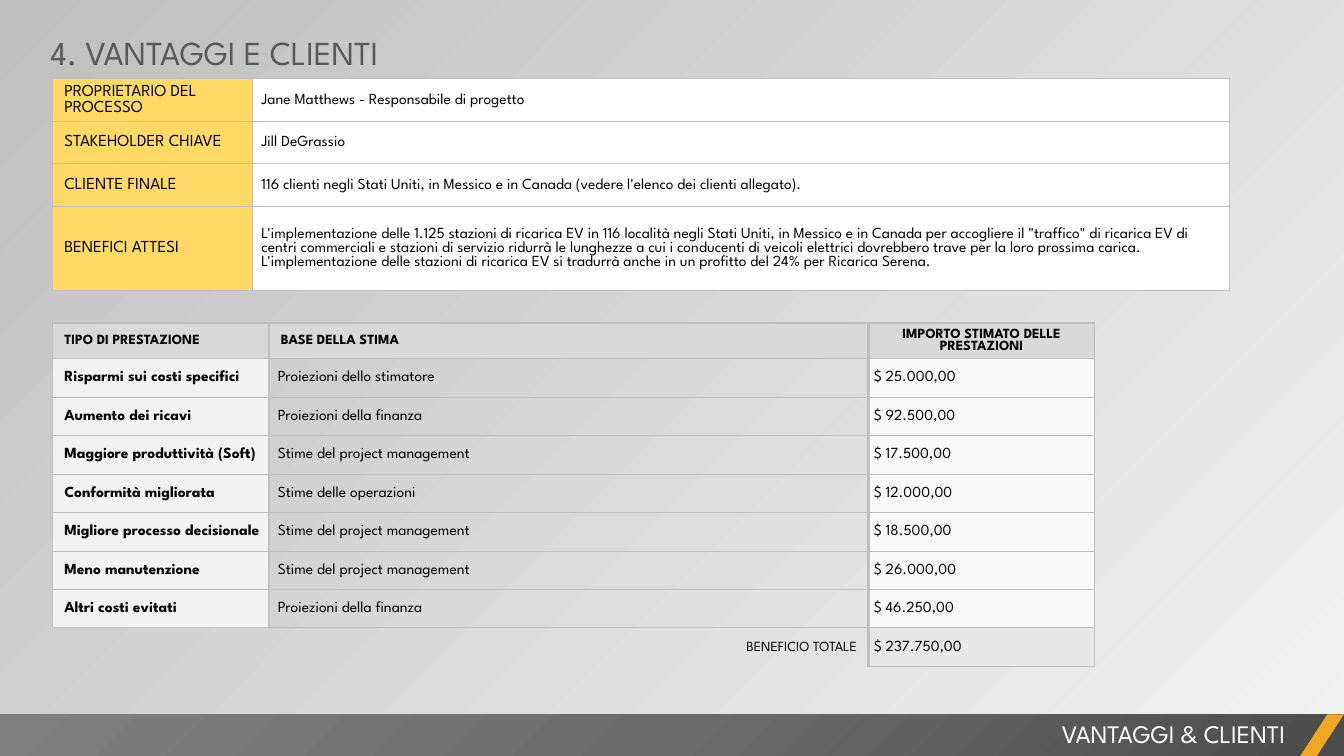
from pptx import Presentation
from pptx.dml.color import RGBColor
from pptx.enum.shapes import MSO_SHAPE
from pptx.enum.text import MSO_ANCHOR, PP_ALIGN
from pptx.oxml import parse_xml
from pptx.oxml.ns import nsdecls, qn
from pptx.util import Cm, Pt

RECTANGLE, PARALLELOGRAM = MSO_SHAPE.RECTANGLE, MSO_SHAPE.PARALLELOGRAM
LEFT, CENTER, RIGHT = PP_ALIGN.LEFT, PP_ALIGN.CENTER, PP_ALIGN.RIGHT
TOP, MIDDLE = MSO_ANCHOR.TOP, MSO_ANCHOR.MIDDLE
NO_STYLE_TABLE = "{2D5ABB26-0587-4C30-8999-92F81FD0307C}"


class Theme:
    font = "League Spartan"
    black, white, title_gray = "000000", "FFFFFF", "595959"
    yellow, orange, border = "FFD966", "F0A622", "BFBFBF"
    header, benefit, amount, total = "D9D9D9", "F2F2F2", "F9F9F9", "E8E8E8"
    background = ("F2F2F2", "BFBFBF")
    band = ((0, "4C4C4C"), (50, "6B6B6B"), (100, "808080"))
    title_size, footer_size = 24, 18
    label_size, body_size, header_size = 12, 11, 10
    thin, medium, top_line, thick = 0.5, 1, 1.5, 2


def write(frame, text, size=Theme.body_size, color=Theme.black, bold=False,
          align=LEFT, wrap=True):
    frame.word_wrap = wrap
    paragraph = frame.paragraphs[0]
    paragraph.alignment = align
    run = paragraph.add_run()
    run.text = text
    run.font.name = Theme.font
    run.font.size = Pt(size)
    run.font.bold = bold
    run.font.color.rgb = RGBColor.from_string(color)


def format_cell(cell, fill=None, inset=0.3, right_inset=0.03, **borders):
    """Borders are given in points by side: L, R, T, B."""
    cell.vertical_anchor = MIDDLE
    cell.margin_left, cell.margin_right = Cm(inset), Cm(right_inset)
    cell.margin_top, cell.margin_bottom = Cm(0.03), Cm(0)
    properties = cell._tc.get_or_add_tcPr()
    for side in "LRTB":
        if side in borders:
            properties.append(parse_xml(
                f'<a:ln{side} {nsdecls("a")} w="{Pt(borders[side])}"><a:solidFill>'
                f'<a:srgbClr val="{Theme.border}"/></a:solidFill></a:ln{side}>'))
    if fill:
        cell.fill.solid()
        cell.fill.fore_color.rgb = RGBColor.from_string(fill)
    else:
        cell.fill.background()


presentation = Presentation()
presentation.slide_width, presentation.slide_height = Cm(33.87), Cm(19.05)
slide = presentation.slides.add_slide(presentation.slide_layouts[6])

# Background
background = slide.background.fill
background.gradient()
background.gradient_angle = 135
for stop, color in zip(background.gradient_stops, Theme.background):
    stop.color.rgb = RGBColor.from_string(color)

# Footer band with accent
band = slide.shapes.add_shape(RECTANGLE, Cm(0), Cm(18), Cm(33.87), Cm(1.05))
accent = slide.shapes.add_shape(PARALLELOGRAM, Cm(32.77), Cm(18), Cm(1.1), Cm(1.05))
for shape in (band, accent):
    shape.shadow.inherit = False
    shape.line.fill.background()
accent.adjustments[0] = 0.65
accent.fill.solid()
accent.fill.fore_color.rgb = RGBColor.from_string(Theme.orange)
band.fill.gradient()
stops = "".join(f'<a:gs pos="{position * 1000}"><a:srgbClr val="{color}"/></a:gs>'
                for position, color in Theme.band)
band_properties = band._element.spPr
band_properties.replace(band_properties.find(qn("a:gradFill")), parse_xml(
    f'<a:gradFill {nsdecls("a")} rotWithShape="1"><a:gsLst>{stops}</a:gsLst>'
    '<a:path path="circle"><a:fillToRect l="100000" t="100000"/></a:path></a:gradFill>'))

# Footer text and title
footer = slide.shapes.add_textbox(Cm(13.34), Cm(17.98), Cm(19.3), Cm(1.02))
write(footer.text_frame, "VANTAGGI & CLIENTI", size=Theme.footer_size,
      color=Theme.white, align=RIGHT)
title = slide.shapes.add_textbox(Cm(1.02), Cm(0.69), Cm(11), Cm(1.27))
write(title.text_frame, "4. VANTAGGI E CLIENTI", size=Theme.title_size,
      color=Theme.title_gray, wrap=False)
for box in (footer, title):
    box.text_frame.vertical_anchor = TOP

# Table contents
stakeholders = [
    ("PROPRIETARIO DEL PROCESSO", "Jane Matthews - Responsabile di progetto"),
    ("STAKEHOLDER CHIAVE", "Jill DeGrassio"),
    ("CLIENTE FINALE", "116 clienti negli Stati Uniti, in Messico e in Canada "
     "(vedere l'elenco dei clienti allegato)."),
    ("BENEFICI ATTESI", "L'implementazione delle 1.125 stazioni di ricarica EV in 116 "
     "località negli Stati Uniti, in Messico e in Canada per accogliere il \"traffico\" di "
     "ricarica EV di centri commerciali e stazioni di servizio ridurrà le lunghezze a cui i "
     "conducenti di veicoli elettrici dovrebbero trave per la loro prossima carica. "
     "L'implementazione delle stazioni di ricarica EV si tradurrà anche in un profitto del "
     "24% per Ricarica Serena."),
]
headers = ("TIPO DI PRESTAZIONE", "BASE DELLA STIMA", "IMPORTO STIMATO DELLE PRESTAZIONI")
benefits = [
    ("Risparmi sui costi specifici", "Proiezioni dello stimatore", "$ 25.000,00"),
    ("Aumento dei ricavi", "Proiezioni della finanza", "$ 92.500,00"),
    ("Maggiore produttività (Soft)", "Stime del project management", "$ 17.500,00"),
    ("Conformità migliorata", "Stime delle operazioni", "$ 12.000,00"),
    ("Migliore processo decisionale", "Stime del project management", "$ 18.500,00"),
    ("Meno manutenzione", "Stime del project management", "$ 26.000,00"),
    ("Altri costi evitati", "Proiezioni della finanza", "$ 46.250,00"),
]

# Empty tables
tables = []
for top, widths, heights in (
        (1.98, (5.05, 24.61), (1.07, 1.07, 1.07, 2.13)),
        (8.13, (5.46, 5.46, 3.78, 5.87, 5.69), (0.9,) + (0.97,) * 8)):
    table = slide.shapes.add_table(len(heights), len(widths), Cm(1.32), Cm(top),
                                   Cm(sum(widths)), Cm(sum(heights))).table
    table.first_row = table.horz_banding = False
    table._tbl.tblPr.find(qn("a:tableStyleId")).text = NO_STYLE_TABLE
    for column, width in zip(table.columns, widths):
        column.width = Cm(width)
    for row, height in zip(table.rows, heights):
        row.height = Cm(height)
    tables.append(table)
stakeholder_table, benefit_table = tables

# Stakeholder table
for row, (label, detail) in enumerate(stakeholders):
    top_line = Theme.thin if row else Theme.top_line
    for column, (text, size, fill, inset) in enumerate((
            (label, Theme.label_size, Theme.yellow, 0.3),
            (detail, Theme.body_size, Theme.white, 0.22))):
        cell = stakeholder_table.cell(row, column)
        format_cell(cell, fill, inset, L=Theme.thin, R=Theme.thin, T=top_line, B=Theme.thin)
        write(cell.text_frame, text, size=size)

# Benefit table: header and benefit rows
for row, texts in enumerate([headers] + benefits):
    is_header = row == 0
    fills = (Theme.header,) * 3 if is_header else (Theme.benefit, None, Theme.amount)
    insets = (0.3, 0.3, 0.03) if is_header else (0.3, 0.22, 0.13)
    benefit_table.cell(row, 1).merge(benefit_table.cell(row, 3))
    for column, text, fill, inset in zip((0, 1, 4), texts, fills, insets):
        cell = benefit_table.cell(row, column)
        format_cell(cell, fill, inset,
                    L=Theme.thick if column else Theme.thin,
                    R=Theme.thin if column == 4 else Theme.thick,
                    T=Theme.top_line if is_header else Theme.thin,
                    B=Theme.medium if row == len(benefits) else Theme.thin)
        write(cell.text_frame, text, bold=is_header or column == 0,
              size=Theme.header_size if is_header else Theme.body_size,
              align=CENTER if is_header and column == 4 else LEFT)

# Benefit table: total row
total_row = len(benefits) + 1
for column in range(3):
    format_cell(benefit_table.cell(total_row, column), T=Theme.medium)
total_label, total_amount = (benefit_table.cell(total_row, column) for column in (3, 4))
format_cell(total_label, inset=0.03, right_inset=0.3, T=Theme.medium, R=Theme.thick)
write(total_label.text_frame, "BENEFICIO TOTALE", size=Theme.header_size, align=RIGHT)
format_cell(total_amount, Theme.total, 0.13,
            L=Theme.thick, R=Theme.thin, T=Theme.medium, B=Theme.medium)
write(total_amount.text_frame, "$ 237.750,00")

presentation.save("out.pptx")
